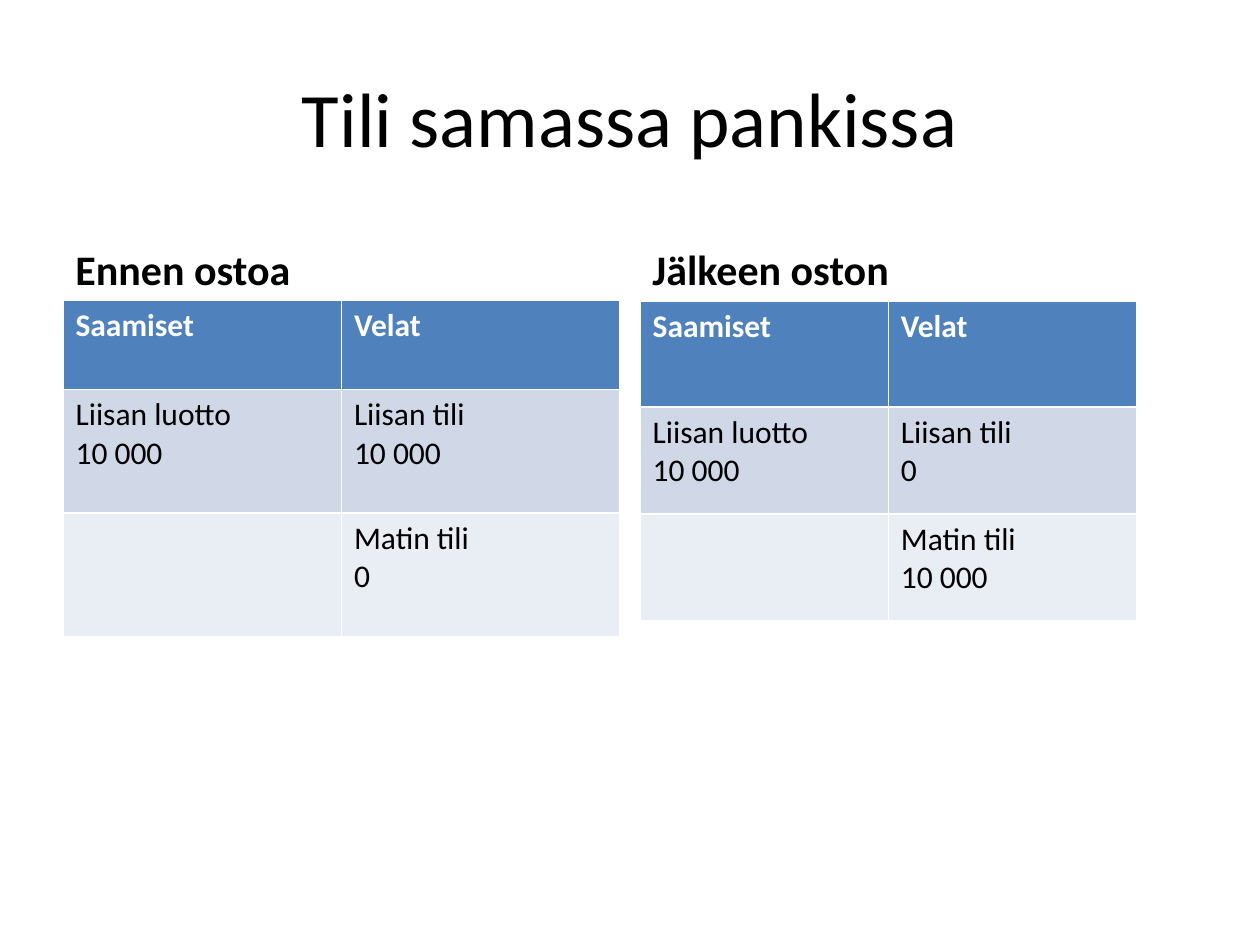
"""Build a slide comparing bank balances before and after a purchase."""
from pptx import Presentation
from pptx.dml.color import RGBColor
from pptx.enum.text import MSO_ANCHOR, PP_ALIGN
from pptx.util import Inches, Pt

BLACK = RGBColor(0x00, 0x00, 0x00)
WHITE = RGBColor(0xFF, 0xFF, 0xFF)
HEADER_BLUE = RGBColor(0x4F, 0x81, 0xBD)
BAND_DARK = RGBColor(0xD0, 0xD8, 0xE8)
BAND_LIGHT = RGBColor(0xE9, 0xED, 0xF4)
ROW_FILLS = (HEADER_BLUE, BAND_DARK, BAND_LIGHT)
MIDDLE = MSO_ANCHOR.MIDDLE
BOTTOM = MSO_ANCHOR.BOTTOM
CENTER = PP_ALIGN.CENTER
LEFT = PP_ALIGN.LEFT


class SlideBuilder:
    def __init__(self, slide, font="Calibri"):
        self.slide = slide
        self.font = font

    def format_text(self, text_frame, size, color=BLACK, bold=False, align=LEFT):
        for paragraph in text_frame.paragraphs:
            paragraph.alignment = align
            for run in paragraph.runs:
                run.font.name = self.font
                run.font.size = Pt(size)
                run.font.bold = bold
                run.font.color.rgb = color

    def title(self, text, left, top, width, height):
        shape = self.slide.shapes.title
        shape.left, shape.top = Inches(left), Inches(top)
        shape.width, shape.height = Inches(width), Inches(height)
        shape.text_frame.text = text
        shape.text_frame.vertical_anchor = MIDDLE
        self.format_text(shape.text_frame, 44, align=CENTER)

    def heading(self, text, left, top, width, height):
        shape = self.slide.shapes.add_textbox(
            Inches(left), Inches(top), Inches(width), Inches(height))
        text_frame = shape.text_frame
        text_frame.word_wrap = True
        text_frame.vertical_anchor = BOTTOM
        text_frame.text = text
        self.format_text(text_frame, 24, bold=True)

    def table(self, rows, left, top, width, row_heights):
        table = self.slide.shapes.add_table(
            len(rows), len(rows[0]), Inches(left), Inches(top),
            Inches(width), Inches(sum(row_heights))).table
        for row_index, (texts, height) in enumerate(zip(rows, row_heights)):
            is_header = row_index == 0
            table.rows[row_index].height = Inches(height)
            for column_index, text in enumerate(texts):
                cell = table.cell(row_index, column_index)
                cell.fill.solid()
                cell.fill.fore_color.rgb = ROW_FILLS[row_index]
                if text:
                    cell.text_frame.text = text
                    self.format_text(cell.text_frame, 18,
                                     WHITE if is_header else BLACK, is_header)


def balance_rows(liisa_balance, matti_balance):
    return [
        ("Saamiset", "Velat"),
        ("Liisan luotto\n10 000", f"Liisan tili\n{liisa_balance}"),
        ("", f"Matin tili\n{matti_balance}"),
    ]


def main():
    presentation = Presentation()
    presentation.slide_width = Inches(10)
    presentation.slide_height = Inches(7.5)
    title_only = presentation.slide_layouts[5]
    builder = SlideBuilder(presentation.slides.add_slide(title_only))

    builder.title("Tili samassa pankissa", 0.5, 0.3, 9, 1.25)
    builder.heading("Ennen ostoa", 0.5, 1.68, 4.42, 0.7)
    builder.table(balance_rows("10 000", "0"), 0.5, 2.38, 4.42, (0.71, 0.98, 0.98))
    builder.heading("Jälkeen oston", 5.08, 1.68, 4.42, 0.7)
    builder.table(balance_rows("0", "10 000"), 5.08, 2.39, 3.94, (0.84, 0.85, 0.85))

    presentation.save("out.pptx")


if __name__ == "__main__":
    main()
